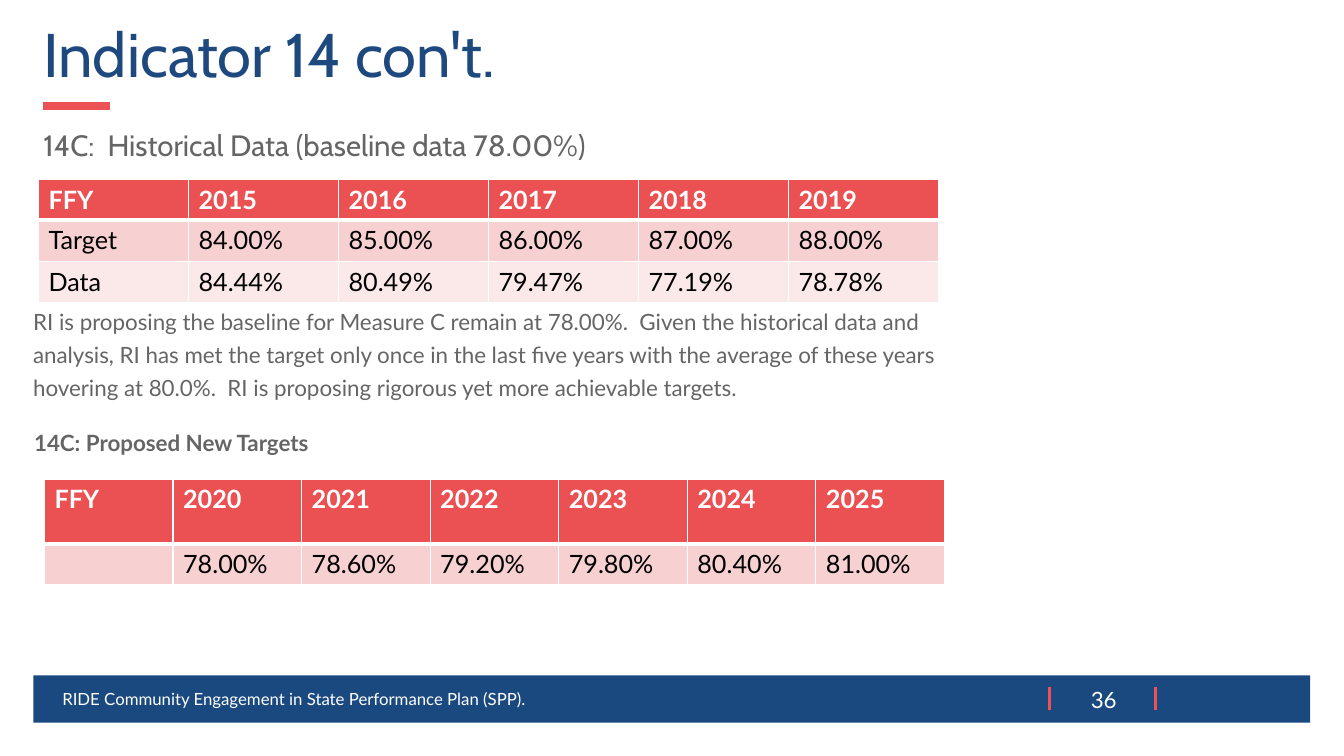
import collections
import dataclasses

import lxml.etree
import pptx
import pptx.dml.color
import pptx.enum.shapes
import pptx.enum.text
import pptx.oxml.ns
import pptx.util

Cm, Pt = pptx.util.Cm, pptx.util.Pt
ALIGN = pptx.enum.text.PP_ALIGN
ANCHOR = pptx.enum.text.MSO_ANCHOR
Box = collections.namedtuple("Box", "left top width height")


@dataclasses.dataclass(frozen=True)
class Theme:
    navy: str = "1E497F"
    bar: str = "1A497F"
    red: str = "EC5153"
    head: str = "EB5152"
    bands: tuple = ("F7D0D1", "FBE9E9")
    gray: str = "656565"
    white: str = "FFFFFF"
    black: str = "000000"
    serif: str = "Cabin"
    sans: str = "Lato"
    title: int = 44
    sub: int = 21
    cell: int = 18
    text: int = 16
    small: int = 12


T = Theme()


def rgb(code):
    return pptx.dml.color.RGBColor.from_string(code)


def tag(name):
    return pptx.oxml.ns.qn(name)


def apply(item, values):
    for key, value in values.items():
        setattr(item, key, value)


def put(shape, box):
    apply(shape, {key: Cm(value) for key, value in box._asdict().items()})


def write(frame, words, size, color, name=T.sans, bold=False, **para):
    line = frame.paragraphs[0]
    apply(line, para)
    if words:
        run = line.add_run()
        run.text = words
        apply(run.font, {"size": Pt(size), "name": name, "bold": bold})
        run.font.color.rgb = rgb(color)


def setup(frame, anchor):
    apply(frame, {"word_wrap": True, "vertical_anchor": anchor,
                  "auto_size": pptx.enum.text.MSO_AUTO_SIZE.NONE})


def label(slide, box, words, size, color, anchor=ANCHOR.MIDDLE, **rest):
    shape = slide.shapes.add_textbox(*map(Cm, box))
    setup(shape.text_frame, anchor)
    write(shape.text_frame, words, size, color, **rest)


def stroke(slide, start, end, width):
    line = slide.shapes.add_connector(
        pptx.enum.shapes.MSO_CONNECTOR.STRAIGHT, *map(Cm, start + end))
    line.line.color.rgb = rgb(T.red)
    line.line.width = Pt(width)
    lxml.etree.SubElement(line._element.spPr, tag("a:effectLst"))


BODY = {"line_spacing": 1.23, "space_before": Pt(0), "space_after": Pt(6)}


# Title with its short red rule
def header(slide, box, words):
    title = slide.shapes.title
    put(title, box)
    setup(title.text_frame, ANCHOR.MIDDLE)
    write(title.text_frame, words, T.title, T.navy, T.serif,
          alignment=ALIGN.LEFT, line_spacing=0.9)
    left, rule = box.left + 0.25, box.top + 2.19
    stroke(slide, (left, rule), (left + 1.68, rule), 6)


# Unbulleted body placeholder
def body(slide, index, box, words, size, name):
    shape = slide.placeholders[index]
    put(shape, box)
    setup(shape.text_frame, ANCHOR.TOP)
    props = shape.text_frame.paragraphs[0]._p.get_or_add_pPr()
    for key in ("marL", "indent"):
        props.set(key, "0")
    lxml.etree.SubElement(props, tag("a:buNone"))
    write(shape.text_frame, words, size, T.gray, name,
          alignment=ALIGN.LEFT, **BODY)


def border(cell, edges):
    props = cell._tc.get_or_add_tcPr()
    for spot, (side, width) in enumerate(edges.items()):
        line = lxml.etree.Element(tag("a:ln" + side), w=str(Pt(width)))
        fill = lxml.etree.SubElement(line, tag("a:solidFill"))
        lxml.etree.SubElement(fill, tag("a:srgbClr"), val=T.white)
        props.insert(spot, line)


# Table with a red head row and pink bands
def grid(slide, box, rows, first):
    cols = len(rows[0])
    table = slide.shapes.add_table(len(rows), cols, *map(Cm, box)).table
    for col in table.columns:
        col.width = Cm(box.width / cols)
    rest = (box.height - first) / (len(rows) - 1)
    for r, row in enumerate(rows):
        table.rows[r].height = Cm(rest if r else first)
        for c, words in enumerate(row):
            cell = table.cell(r, c)
            cell.fill.solid()
            cell.fill.fore_color.rgb = rgb(T.bands[r - 1] if r else T.head)
            border(cell, {"L": 1, "R": 1, "T": 3 if r == 1 else 1,
                          "B": 1 if r else 3})
            write(cell.text_frame, words, T.cell,
                  T.black if r else T.white, bold=not r)


# Blue bar with the event name and page number
def footer(slide, box, words, page):
    bar = slide.shapes.add_shape(
        pptx.enum.shapes.MSO_SHAPE.RECTANGLE, *map(Cm, box))
    bar.shadow.inherit = False
    bar.fill.solid()
    bar.fill.fore_color.rgb = rgb(T.bar)
    bar.line.fill.background()
    for gap in (25.6, 28.29):
        x, y = box.left + gap, box.top + 0.3
        stroke(slide, (x, y), (x, y + 0.56), 2.25)
    label(slide, Box(box.left + 0.48, box.top + 0.08, 21.51, 1.02),
          words, T.small, T.white)
    label(slide, Box(box.left + 26.16, box.top + 0.13, 1.63, 0.94),
          page, T.text, T.white, alignment=ALIGN.CENTER)


def main():
    deck = pptx.Presentation()
    apply(deck, {"slide_width": Cm(33.87), "slide_height": Cm(19.05)})
    slide = deck.slides.add_slide(deck.slide_layouts.get_by_name("Two Content"))

    footer(slide, Box(0.84, 17.02, 32.18, 1.19),
           "RIDE Community Engagement in State Performance Plan (SPP).", "36")
    header(slide, Box(0.84, 0.48, 32.18, 1.96), "Indicator 14 con't.")

    # Past targets and results
    body(slide, 1, Box(0.84, 2.87, 32.18, 2.36),
         "14C:  Historical Data (baseline data 78.00%)", T.sub, T.serif)
    body(slide, 2, Box(0.58, 7.49, 23.44, 9.6),
         "RI is proposing the baseline for Measure C remain at 78.00%.  Given "
         "the historical data and analysis, RI has met the target only once "
         "in the last five years with the average of these years hovering at "
         "80.0%.  RI is proposing rigorous yet more achievable targets.",
         T.text, T.sans)
    grid(slide, Box(0.97, 4.52, 22.68, 3.1), [
        ["FFY", "2015", "2016", "2017", "2018", "2019"],
        ["Target", "84.00%", "85.00%", "86.00%", "87.00%", "88.00%"],
        ["Data", "84.44%", "80.49%", "79.47%", "77.19%", "78.78%"],
    ], 1.02)

    # New targets
    grid(slide, Box(1.12, 12.07, 22.68, 2.67), [
        ["FFY", "2020", "2021", "2022", "2023", "2024", "2025"],
        ["", "78.00%", "78.60%", "79.20%", "79.80%", "80.40%", "81.00%"],
    ], 1.63)
    label(slide, Box(0.61, 10.54, 8.05, 2.29), "14C: Proposed New Targets",
          T.text, T.gray, ANCHOR.TOP, bold=True, **BODY)

    deck.save("out.pptx")


if __name__ == "__main__":
    main()
